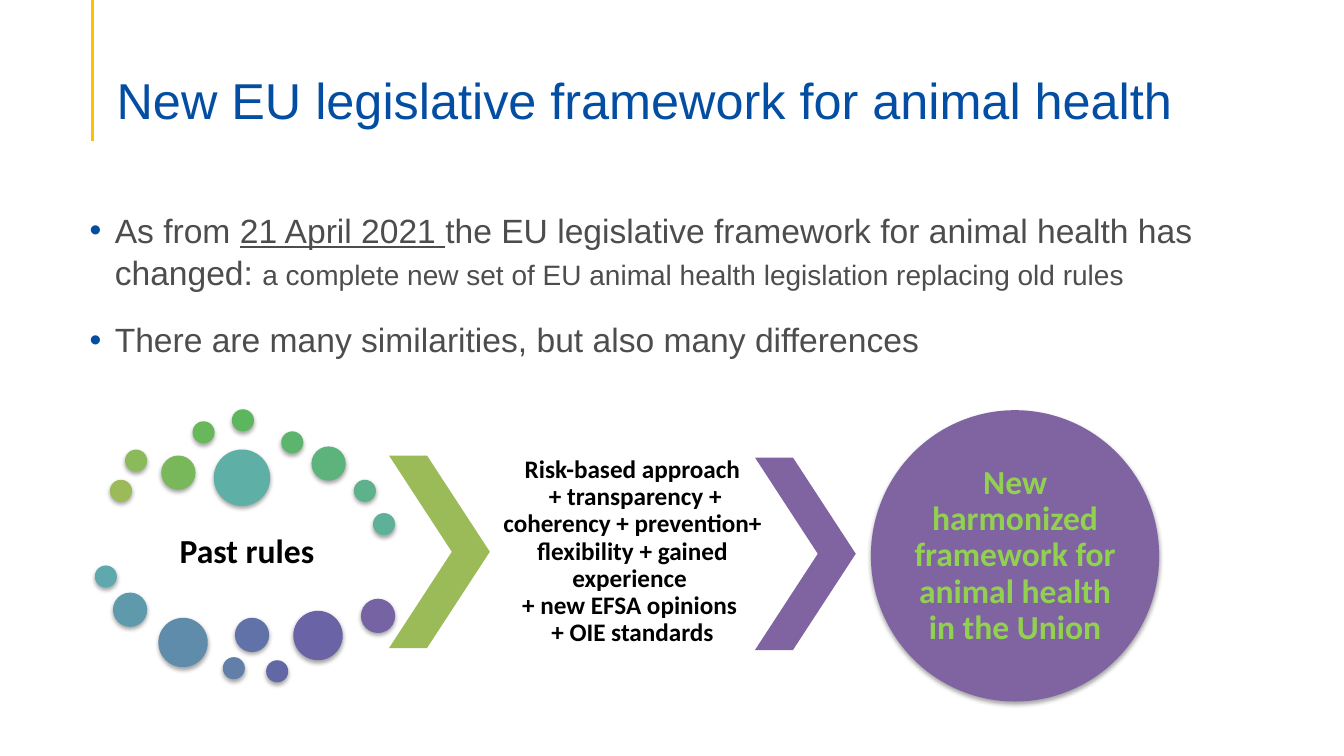
import pptx
import pptx.dml.color
import pptx.enum.shapes
import pptx.enum.text
import pptx.oxml
import pptx.oxml.ns
import pptx.util
from lxml import etree

Pt = pptx.util.Pt
SHAPES = pptx.enum.shapes.MSO_SHAPE
ANCHOR = pptx.enum.text.MSO_ANCHOR
ALIGN = pptx.enum.text.PP_ALIGN
qn = pptx.oxml.ns.qn

COLOURS = {
    "accent": "FFC000",
    "title": "034EA2",
    "body": "4D4D4D",
    "label": "000000",
    "past": "9BBB59",
    "future": "8064A2",
    "future_text": "92D050",
}
DOT_COLOURS = dict(enumerate(
    "9BBB59 8ABA5A 79B85A 69B75B 5BB65D 5CB46D 5CB37C 5DB28B 5EB099 5EAFA6 "
    "5FA8AD 5F9AAC 608CAB 617FA9 6172A8 6267A6 6A63A5 7563A3".split()))

SMALL, MEDIUM, LARGE, HUGE = 15.8, 24.5, 35.3, 40.3
# Left, top and diameter of each dot, within the cloud
DOTS = [
    (10.8, 50.4, SMALL), (21.6, 28.8, SMALL), (47.5, 33.1, MEDIUM),
    (69.8, 8.6, SMALL), (97.9, 0, SMALL), (133.2, 15.8, SMALL),
    (154.8, 26.6, MEDIUM), (185, 50.4, SMALL), (198.7, 74.2, SMALL),
    (85, 28.8, HUGE), (0, 111.6, SMALL), (13, 131, MEDIUM),
    (45.4, 149, LARGE), (91.4, 177.1, SMALL), (100.1, 149, MEDIUM),
    (122.4, 179.3, SMALL), (141.8, 144, LARGE), (190.1, 135.4, MEDIUM),
]


def rgb(colour):
    return pptx.dml.color.RGBColor.from_string(colour)


def add_run(paragraph, text, size, font, colour, bold=None, underline=None):
    run = paragraph.add_run()
    run.text = text
    run.font.size = Pt(size)
    run.font.name = font
    run.font.bold = bold
    run.font.underline = underline
    run.font.color.rgb = rgb(colour)


def add_text_frame(slide, box, anchor, insets):
    frame = slide.shapes.add_textbox(*map(Pt, box)).text_frame
    frame.word_wrap = True
    frame.vertical_anchor = anchor
    (frame.margin_left, frame.margin_top,
     frame.margin_right, frame.margin_bottom) = map(Pt, insets)
    return frame


def add_filled_shape(slide, kind, box, colour):
    shape = slide.shapes.add_shape(kind, *map(Pt, box))
    shape.shadow.inherit = False
    shape.fill.solid()
    shape.fill.fore_color.rgb = rgb(colour)
    shape.line.fill.background()
    return shape


def add_circle(slide, box, colour):
    """Add an ellipse with a soft shadow below it."""
    circle = add_filled_shape(slide, SHAPES.OVAL, box, colour)
    effects = circle._element.spPr.find(qn("a:effectLst"))
    shadow = etree.SubElement(
        effects, qn("a:outerShdw"), blurRad=str(Pt(3.1)), dist=str(Pt(1.8)),
        dir="5400000", rotWithShape="0")
    tint = etree.SubElement(shadow, qn("a:srgbClr"), val="000000")
    etree.SubElement(tint, qn("a:alpha"), val="35000")


def add_chevron(slide, box, colour):
    chevron = add_filled_shape(slide, SHAPES.CHEVRON, box, colour)
    chevron.adjustments[0] = 0.623


def add_label(slide, box, lines, size, colour, inset=2.2):
    """Add centred bold text, with a line break between the lines."""
    frame = add_text_frame(slide, box, ANCHOR.MIDDLE, [inset] * 4)
    paragraph = frame.paragraphs[0]
    paragraph.alignment = ALIGN.CENTER
    paragraph.line_spacing = 0.9
    for number, line in enumerate(lines):
        if number:
            paragraph.add_line_break()
        add_run(paragraph, line, size, "Calibri", colour, bold=True)


def add_heading(slide, box):
    left, top, width, height = box
    rule = slide.shapes.add_connector(
        pptx.enum.shapes.MSO_CONNECTOR.STRAIGHT,
        Pt(left), Pt(top), Pt(left), Pt(top + height))
    rule.line.color.rgb = rgb(COLOURS["accent"])
    rule.line.width = Pt(2.25)
    etree.SubElement(rule._element.spPr, qn("a:effectLst"))

    title_box = (left + 10, top + 31, width - 10, 62)
    frame = add_text_frame(slide, title_box, ANCHOR.BOTTOM, (7.2, 3.6, 7.2, 0))
    title = frame.paragraphs[0]
    title.line_spacing = 0.9
    add_run(title, "New EU legislative framework for animal health",
            36, "Arial", COLOURS["title"])


def add_bullets(slide, box):
    frame = add_text_frame(slide, box, ANCHOR.TOP, (7.2, 3.6, 7.2, 3.6))
    points = [
        [("As from ", 24, None),
         ("21 April 2021 ", 24, True),
         ("the EU legislative framework for animal health has changed: ", 24, None),
         ("a complete new set of EU animal health legislation replacing old rules",
          20, None)],
        [("There are many similarities, but also many differences", 24, None)],
    ]
    for number, runs in enumerate(points):
        point = frame.add_paragraph() if number else frame.paragraphs[0]
        properties = point._p.get_or_add_pPr()
        properties.set("marL", str(Pt(18)))
        properties.set("indent", str(-Pt(18)))
        bullet_colour = etree.SubElement(properties, qn("a:buClr"))
        etree.SubElement(bullet_colour, qn("a:srgbClr"), val=COLOURS["title"])
        etree.SubElement(properties, qn("a:buFont"), typeface="Arial")
        etree.SubElement(properties, qn("a:buChar"), char="•")
        point.line_spacing = 1.05
        point.space_after = Pt(18)
        for text, size, underline in runs:
            add_run(point, text, size, "Arial", COLOURS["body"], underline=underline)


def add_past_rules(slide, box):
    """Add the cloud of dots around its label."""
    left, top, width, height = box
    add_label(slide, (left + 10.8, top + 69.8, 195.8, 64.8), ["Past rules"],
              24, COLOURS["label"])
    for number, (x, y, diameter) in enumerate(DOTS):
        add_circle(slide, (left + x, top + y, diameter, diameter),
                   DOT_COLOURS[number])


def add_drivers(slide, box):
    """Add the reasons for the change between two chevrons."""
    left, top, width, height = box
    chevron_width = 72
    add_chevron(slide, (left, top, chevron_width, height), COLOURS["past"])
    add_label(
        slide, (left + 75.6, top - 30.2, 196.6, 198),
        ["Risk-based approach",
         " + transparency + coherency + prevention+ flexibility + gained experience ",
         "+ new EFSA opinions ",
         "+ OIE standards"],
        18, COLOURS["label"])
    add_chevron(slide, (left + width - chevron_width, top + 1.4,
                        chevron_width, height), COLOURS["future"])


def add_new_framework(slide, box):
    left, top, width, height = box
    add_circle(slide, box, COLOURS["future"])
    side, upper = 30.2, 30.8
    add_label(slide, (left + side, top + upper, width - 2 * side, height - 2 * upper),
              ["New harmonized framework for animal health in the Union"],
              24, COLOURS["future_text"], inset=0)


def main():
    deck = pptx.Presentation()
    deck.slide_width, deck.slide_height = Pt(960), Pt(540)
    slide = deck.slides.add_slide(deck.slide_layouts[6])
    add_heading(slide, (66.2, 0, 862, 100.8))
    add_past_rules(slide, (67.7, 292.3, 214.6, 195.1))
    add_drivers(slide, (277.9, 325.4, 333.4, 137.5))
    add_new_framework(slide, (622.1, 293, 205.9, 208.1))
    add_bullets(slide, (56.9, 144.7, 805, 152.6))
    deck.save("out.pptx")


if __name__ == "__main__":
    main()
